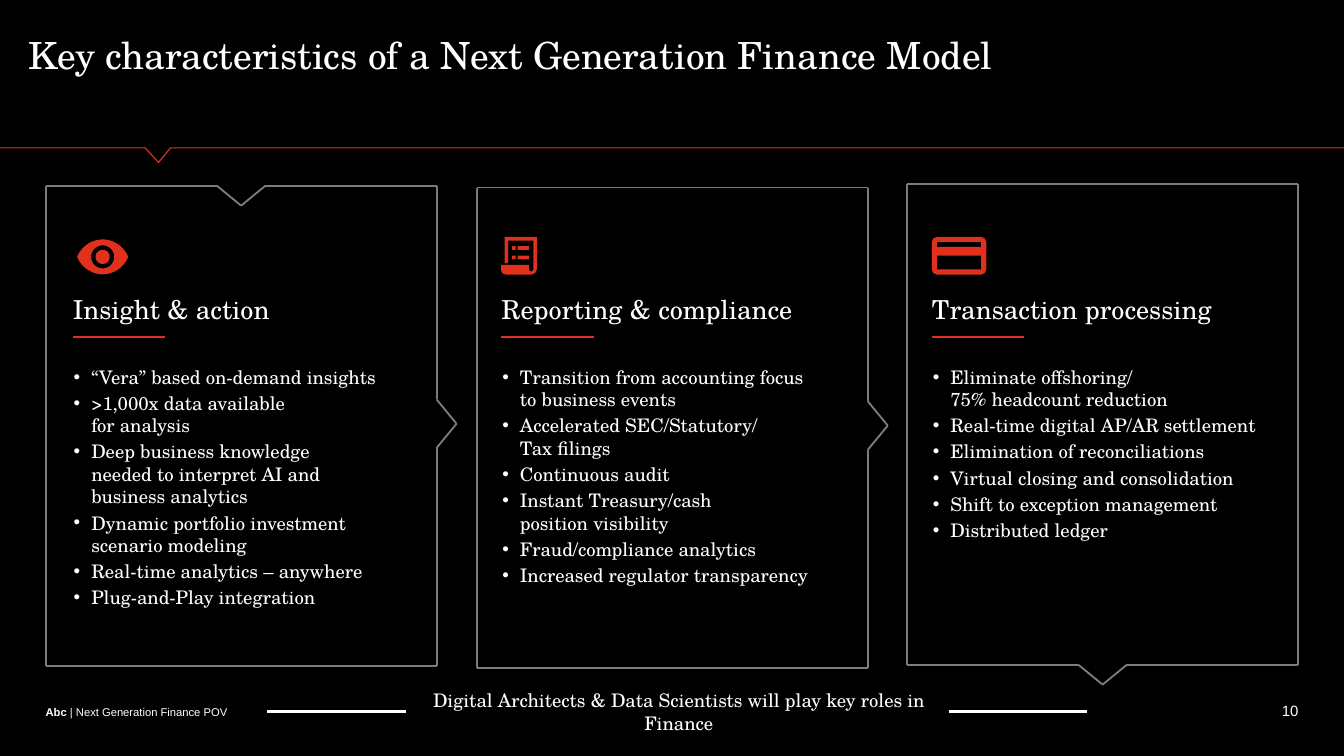
from copy import deepcopy
from dataclasses import dataclass
from itertools import pairwise
from math import cos, pi, sin

from lxml.etree import SubElement
from pptx import Presentation
from pptx.dml.color import RGBColor
from pptx.enum.shapes import MSO_CONNECTOR
from pptx.enum.text import MSO_ANCHOR, MSO_AUTO_SIZE, PP_ALIGN
from pptx.oxml.ns import qn
from pptx.util import Pt

COLORS = {"black": "000000", "white": "FFFFFF", "frame": "7C7C7B",
          "accent": "E0301E", "rule": "E1301E"}
SERIF, SANS = "TeX Gyre Schola", "Arial"
PANEL_W, PANEL_H = 209.4, 257.4
NOTCH_HALF, NOTCH_DEPTH = 13, 10.7

Point = tuple[float, float]
Contour = list[Point]


@dataclass
class Panel:
    left: float
    top: float
    text_left: float
    notches: tuple[str, ...]
    heading: str
    bullets: list[str]
    icon: list[Contour]
    icon_at: Point


def rgb(name: str) -> RGBColor:
    return RGBColor.from_string(COLORS[name])


def rect(x1: float, y1: float, x2: float, y2: float) -> Contour:
    return [(x1, y1), (x2, y1), (x2, y2), (x1, y2)]


def circle(cx: float, cy: float, radius: float, n: int = 32) -> Contour:
    return [(cx + radius * cos(2 * pi * i / n), cy + radius * sin(2 * pi * i / n)) for i in range(n)]


def curve(a: Point, b: Point, c: Point, d: Point, n: int = 12) -> Contour:
    """Sample a cubic Bezier curve, leaving out its last point."""
    return [tuple((1 - t) ** 3 * p + 3 * (1 - t) ** 2 * t * q + 3 * (1 - t) * t ** 2 * u + t ** 3 * v
                  for p, q, u, v in zip(a, b, c, d))
            for t in (i / n for i in range(n))]


def eye_icon() -> list[Contour]:
    w, h, cx, cy = 27.4, 18.7, 13.7, 9.35
    lens = (curve((0, cy), (2.2, 4), (7.5, 0), (cx, 0))
            + curve((cx, 0), (w - 7.5, 0), (w - 2.2, 4), (w, cy))
            + curve((w, cy), (w - 2.2, h - 4), (w - 7.5, h), (cx, h))
            + curve((cx, h), (7.5, h), (2.2, h - 4), (0, cy)))
    return [lens, circle(cx, cy, 6.2), circle(cx, cy, 3.8)]


def report_icon() -> list[Contour]:
    scroll = [(0, 15), (15, 15), (15, 17.4), (15.4, 18.3), (16.2, 18.6), (17, 18.2), (17.3, 17.3),
              (17.3, 2), (3.8, 2), (3.8, 14), (2, 14), (2, 0), (19.2, 0), (19.2, 17.3),
              (18.4, 19.4), (16.2, 20.2), (2.5, 20.2), (0.7, 19.5), (0, 17.8)]
    rows = [rect(x1, y, x2, y + 2) for y in (5, 10.1) for x1, x2 in ((5.8, 7.8), (8.9, 15))]
    return [scroll, *rows]


def card_icon() -> list[Contour]:
    w, h = 29.2, 20.2
    outline = [(2.8, 0), (w - 2.8, 0), (w - 0.8, 0.8), (w, 2.8), (w, h - 2.8), (w - 0.8, h - 0.8),
               (w - 2.8, h), (2.8, h), (0.8, h - 0.8), (0, h - 2.8), (0, 2.8), (0.8, 0.8)]
    return [outline, rect(2.8, 2.7, w - 2.8, 5.4), rect(2.8, 10, w - 2.8, 17.4)]


def add_line(s, start: Point, end: Point, color: str, width: float) -> None:
    c = s.shapes.add_connector(MSO_CONNECTOR.STRAIGHT, *(Pt(v) for v in (*start, *end)))
    c.line.color.rgb = rgb(color)
    c.line.width = Pt(width)
    SubElement(c._element.spPr, qn("a:effectLst"))


def add_outline(s, contours: list[Contour], at: Point = (0, 0), close: bool = True):
    moved = [[(Pt(x + at[0]), Pt(y + at[1])) for x, y in pts] for pts in contours]
    fb = s.shapes.build_freeform(*moved[0][0])
    for i, pts in enumerate(moved):
        if i:
            fb.move_to(*pts[0])
        fb.add_line_segments(pts[1:], close=close)
    sp = fb.convert_to_shape()
    sp.shadow.inherit = False
    return sp


def place(sp, left: float, top: float, width: float, height: float, inset: float = 0,
          anchor=MSO_ANCHOR.TOP):
    """Move a text shape, set up its frame and return that frame."""
    sp.left, sp.top, sp.width, sp.height = Pt(left), Pt(top), Pt(width), Pt(height)
    tf = sp.text_frame
    tf.word_wrap, tf.auto_size = True, MSO_AUTO_SIZE.NONE
    tf.margin_left = tf.margin_right = Pt(inset)
    tf.margin_top = tf.margin_bottom = Pt(inset / 2)
    tf.vertical_anchor = anchor
    return tf


def style(p, size: float, font: str = SERIF, align=PP_ALIGN.LEFT, before: float = 0) -> None:
    p.alignment, p.line_spacing = align, 1.0
    p.space_before, p.space_after = Pt(before), Pt(0)
    for r in p.runs:
        r.font.size, r.font.name, r.font.bold = Pt(size), font, False
        r.font.color.rgb = rgb("white")
    for br in p._p.findall(qn("a:br")):
        br.insert(0, deepcopy(p.runs[0]._r.rPr))


def add_bullet(p, indent: float = 9.4) -> None:
    pPr = p._p.get_or_add_pPr()
    pPr.set("marL", str(Pt(indent)))
    pPr.set("indent", str(-Pt(indent)))
    SubElement(SubElement(pPr, qn("a:buClr")), qn("a:srgbClr"), val=COLORS["white"])
    SubElement(pPr, qn("a:buFont"), typeface=SANS)
    SubElement(pPr, qn("a:buChar"), char="•")


def add_label(s, text: str, box: tuple, size: float, font: str = SERIF, **kw):
    tf = place(s.shapes.add_textbox(0, 0, 0, 0), *box, anchor=kw.pop("anchor", MSO_ANCHOR.TOP))
    tf.text = text
    style(tf.paragraphs[0], size, font, **kw)
    return tf.paragraphs[0]


def add_frame(s, panel: Panel) -> None:
    x1, y1, x2, y2 = panel.left, panel.top, panel.left + PANEL_W, panel.top + PANEL_H
    mx, my = (x1 + x2) / 2, (y1 + y2) / 2 - 1.2
    sides = {
        "top": [(x1, y1), (mx - NOTCH_HALF, y1), (mx, y1 + NOTCH_DEPTH), (mx + NOTCH_HALF, y1), (x2, y1)],
        "right": [(x2, y1), (x2, my - NOTCH_HALF), (x2 + NOTCH_DEPTH, my), (x2, my + NOTCH_HALF), (x2, y2)],
        "bottom": [(x1, y2), (mx - NOTCH_HALF, y2), (mx, y2 + NOTCH_DEPTH), (mx + NOTCH_HALF, y2), (x2, y2)],
        "left": [(x1, y1), (x1, y2)],
    }
    for side, pts in sides.items():
        corners = pts if side in panel.notches else [pts[0], pts[-1]]
        for start, end in pairwise(corners):
            add_line(s, start, end, "frame", 1)


def add_panel(s, panel: Panel, body) -> None:
    add_frame(s, panel)
    x = panel.text_left
    icon = add_outline(s, panel.icon, panel.icon_at)
    icon.fill.solid()
    icon.fill.fore_color.rgb = rgb("accent")
    icon.line.fill.background()
    add_label(s, panel.heading, (x, 157, 186, 41), 14)
    add_line(s, (x, 180.6), (x + 49.6, 180.6), "accent", 0.75)
    tf = place(body, x + 0.5, 195.8, 183, 131)
    for i, text in enumerate(panel.bullets):
        p = tf.add_paragraph() if i else tf.paragraphs[0]
        p.text = text
        style(p, 10, before=2 if i else 0)
        add_bullet(p)


PANELS = [
    Panel(24.5, 99.5, 39, ("top", "right"), "Insight & action",
          ["“Vera” based on-demand insights", ">1,000x data available\nfor analysis",
           "Deep business knowledge\nneeded to interpret AI and\nbusiness analytics",
           "Dynamic portfolio investment\nscenario modeling",
           "Real-time analytics – anywhere", "Plug-and-Play integration"], eye_icon(), (41.3, 128.3)),
    Panel(255.5, 100.5, 268.6, ("right",), "Reporting & compliance",
          ["Transition from accounting focus\nto business events",
           "Accelerated SEC/Statutory/\nTax filings", "Continuous audit",
           "Instant Treasury/cash\nposition visibility", "Fraud/compliance analytics",
           "Increased regulator transparency"], report_icon(), (268.4, 126.9)),
    Panel(486, 98.7, 499.2, ("bottom",), "Transaction processing",
          ["Eliminate offshoring/\n75% headcount reduction", "Real-time digital AP/AR settlement",
           "Elimination of reconciliations", "Virtual closing and consolidation",
           "Shift to exception management", "Distributed ledger"], card_icon(), (499.2, 126.9)),
]


def main() -> None:
    prs = Presentation()
    prs.slide_width, prs.slide_height = Pt(720), Pt(405)
    s = prs.slides.add_slide(prs.slide_layouts.get_by_name("Comparison"))
    s.background.fill.solid()
    s.background.fill.fore_color.rgb = rgb("black")
    title, callout, *bodies = s.placeholders

    tf = place(title, 15.1, 17.3, 661, 24.5)
    tf.text = "Key characteristics of a Next Generation Finance Model"
    style(tf.paragraphs[0], 20)

    rule = add_outline(s, [[(720, 79.2), (91.4, 79.2), (85, 87), (77.8, 79.2), (0, 79.2)]], close=False)
    rule.fill.background()
    rule.line.color.rgb = rgb("rule")
    rule.line.width = Pt(0.63)

    for panel, body in zip(PANELS, bodies):
        add_panel(s, panel, body)

    tf = place(callout, 211.7, 375.8, 303.8, 10.8, inset=7.2, anchor=MSO_ANCHOR.MIDDLE)
    tf.text = "Digital Architects & Data Scientists will play key roles in Finance"
    style(tf.paragraphs[0], 10, align=PP_ALIGN.CENTER)
    tf.paragraphs[0].space_after = Pt(2)
    for x in (143.2, 508.2):
        add_line(s, (x, 381.2), (x + 74.2, 381.2), "white", 2)

    p = add_label(s, "Abc", (24.5, 378, 201.6, 7.2), 6, SANS)
    p.add_run().text = " | Next Generation Finance POV"
    style(p, 6, SANS)
    p.runs[0].font.bold = True
    add_label(s, "10", (527.8, 375.8, 167.8, 9.4), 8, SANS, align=PP_ALIGN.RIGHT, anchor=MSO_ANCHOR.MIDDLE)
    prs.save("out.pptx")


if __name__ == "__main__":
    main()
